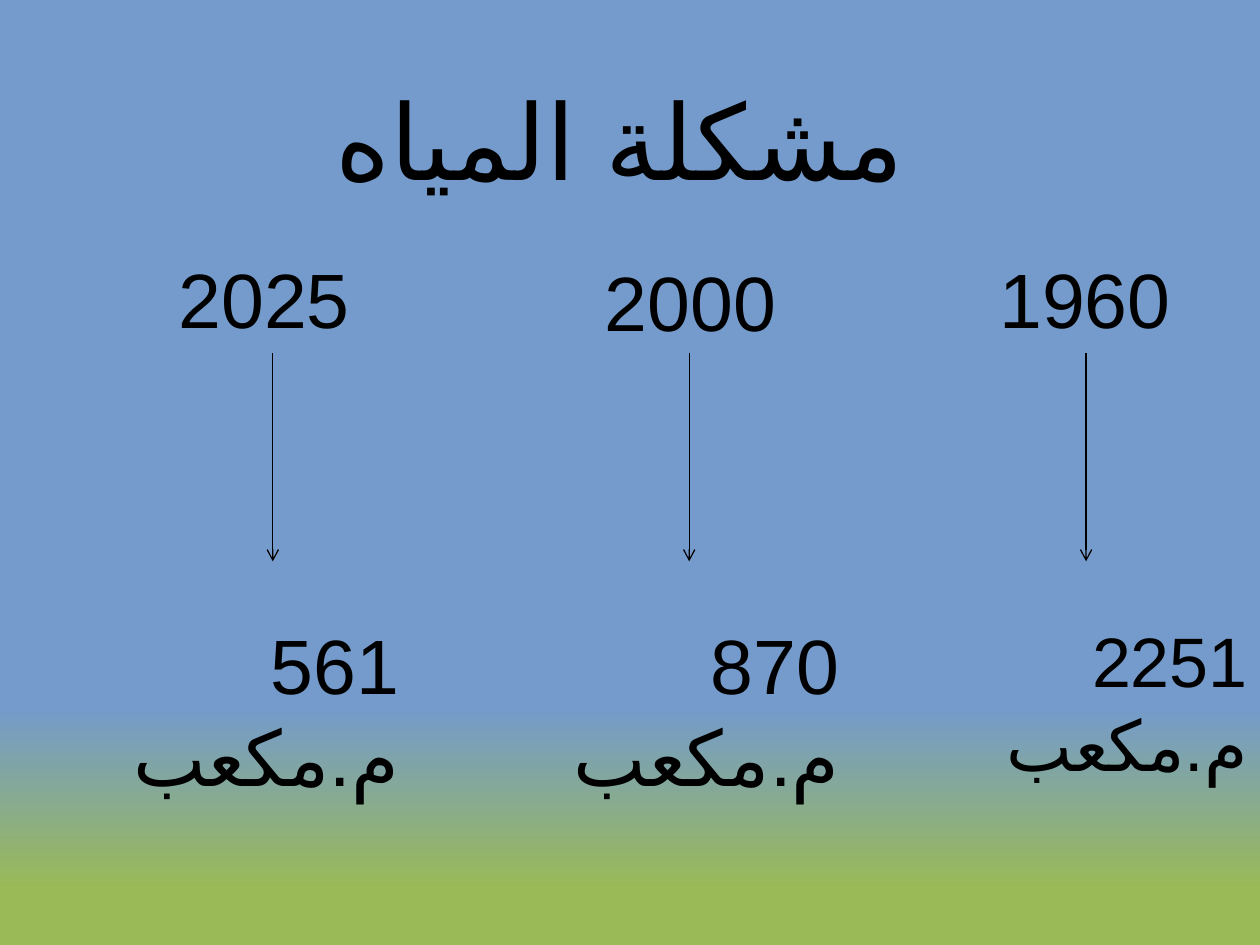
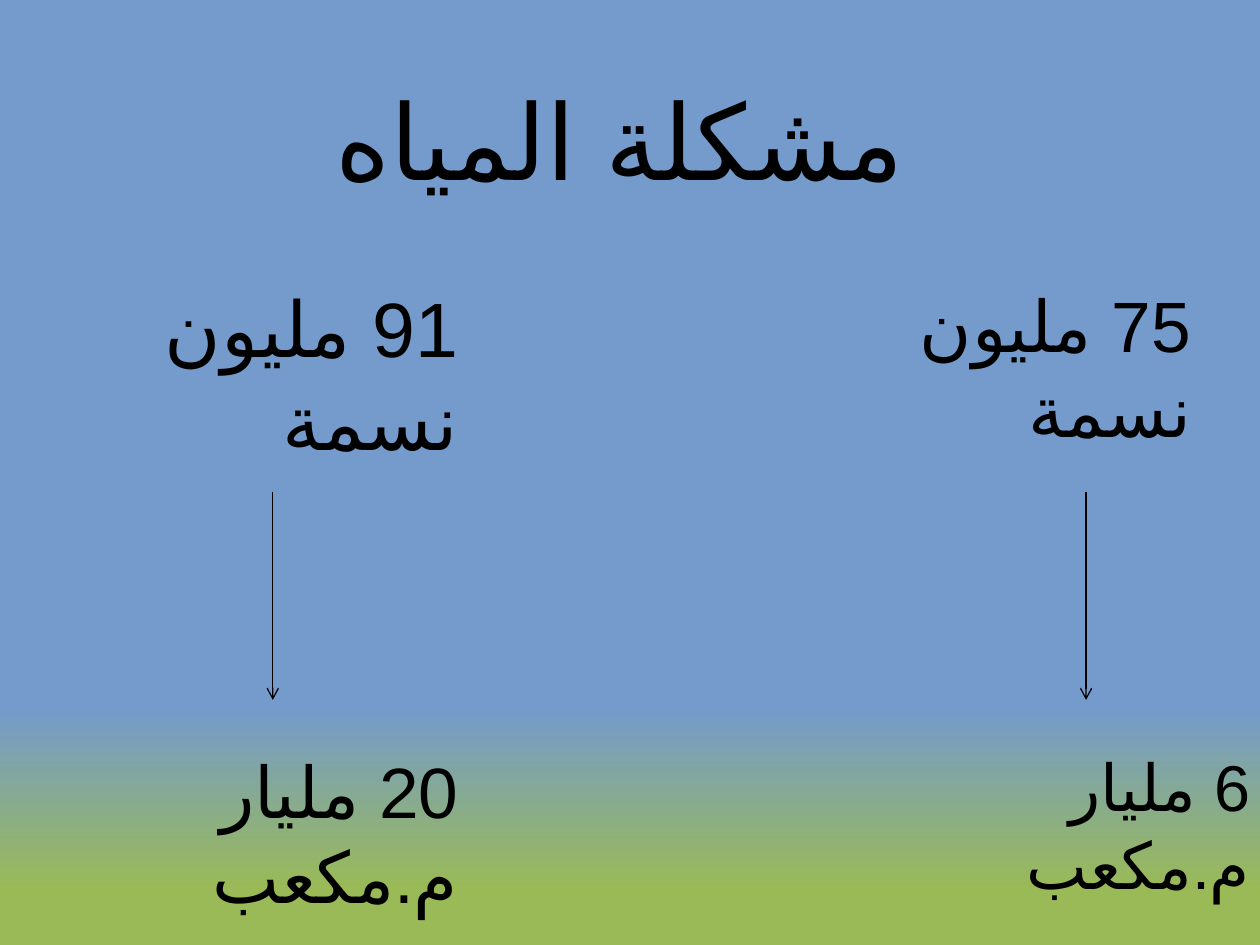
from dataclasses import dataclass

from lxml.etree import SubElement as Sub
from pptx import Presentation
from pptx.dml.color import RGBColor
from pptx.enum.lang import MSO_LANGUAGE_ID as Lang
from pptx.enum.shapes import MSO_CONNECTOR as Line
from pptx.enum.text import MSO_ANCHOR as Anchor, PP_ALIGN as Align
from pptx.oxml.ns import qn
from pptx.util import Inches, Pt

COLS, ROWS = 100, 75
WIDE, HIGH = Inches(10), Inches(7.5)
INK, SKY, GRASS = "000000", "749BCB", "9ABA57"
FONT, SCRIPT = "Calibri", "Arial"
TITLE = "مشكلة المياه"
TITLE_BOX = (6.7, 2.9, 85, 16.1)
ARROW_LEN = 16.5


@dataclass
class Flow:
    """A figure, an arrow and a result; shifts count from the box's left."""
    head: str
    foot: str
    box: tuple
    arrow: float
    shift: float
    width: float
    sizes: tuple = (44, 44)
    nudge: float = 0


WATER = [
    Flow("1960", "2251 م.مكعب", (67.1, 19.5, 26.8, 46), 19.1, 2.2, 30.7, (44, 40)),
    Flow("2000", "870 م.مكعب", (35.8, 19.5, 26.8, 46), 18.9, 2.4, 29.4, nudge=0.2),
    Flow("2025", "561 م.مكعب", (1.95, 19.5, 26.8, 46), 19.7, 0, 30.7),
]
PEOPLE = [
    Flow("75 مليون نسمة", "6 مليار م.مكعب", (65, 21.8, 30.5, 48), 21.2, 4.5, 30.7, (40.7, 37)),
    Flow("91 مليون نسمة", "20 مليار م.مكعب", (4.25, 21.8, 33.1, 48), 17.4, -2.3, 35.4, (44, 40.7)),
]


def rgb(code):
    return RGBColor.from_string(code)


def grid(*nums):
    """Turn columns and rows, in turn, into lengths."""
    units = (WIDE / COLS, HIGH / ROWS)
    return [round(num * units[i % 2]) for i, num in enumerate(nums)]


def write(slide, box, text, size=44, align=Align.RIGHT, anchor=Anchor.TOP, gap=20):
    """Add right-to-left text; gap is the space before in percent."""
    frame = slide.shapes.add_textbox(*grid(*box)).text_frame
    frame.word_wrap = True
    frame.vertical_anchor = anchor
    para = frame.paragraphs[0]
    para.alignment = align
    props = para._p.get_or_add_pPr()
    props.set("rtl", "1")
    if gap:
        space = Sub(props, qn("a:spcBef"))
        Sub(space, qn("a:spcPct")).set("val", str(gap * 1000))
    run = para.add_run()
    run.text = text
    font = run.font
    font.name = FONT
    font.size = Pt(size)
    font.color.rgb = rgb(INK)
    font.language_id = Lang.ARABIC_EGYPT
    Sub(font._element, qn("a:cs")).set("typeface", SCRIPT)


def arrow(slide, x, y):
    line = slide.shapes.add_connector(Line.STRAIGHT, *grid(x, y, x, y + ARROW_LEN))
    line.line.color.rgb = rgb(INK)
    line.line.width = Pt(0.75)
    Sub(line.line._get_or_add_ln(), qn("a:tailEnd")).set("type", "arrow")
    Sub(line._element.spPr, qn("a:effectLst"))


def draw(slide, flow, start, drop):
    """Place one flow: arrow begins start rows down, result drop rows down."""
    left, top, width, height = flow.box
    big, small = flow.sizes
    write(slide, (left, top + flow.nudge, width, 13.4), flow.head, size=big)
    arrow(slide, left + flow.arrow, top + start)
    foot = (left + flow.shift, top + drop, flow.width, height - drop)
    write(slide, foot, flow.foot, size=small)


def paint(slide):
    fill = slide.background.fill
    fill.gradient()
    fill.gradient_angle = 270
    for stop, code, spot in zip(fill.gradient_stops, (SKY, GRASS), (0.75, 0.94)):
        stop.color.rgb = rgb(code)
        stop.position = spot


def page(deck, flows, start, drop):
    slide = deck.slides.add_slide(deck.slide_layouts[6])
    paint(slide)
    write(slide, TITLE_BOX, TITLE, size=60, align=Align.CENTER,
          anchor=Anchor.MIDDLE, gap=0)
    for flow in flows:
        draw(slide, flow, start, drop)


def main():
    deck = Presentation()
    deck.slide_width, deck.slide_height = WIDE, HIGH
    page(deck, WATER, start=8.55, drop=29)
    page(deck, PEOPLE, start=17.25, drop=37)
    deck.save("out.pptx")


if __name__ == "__main__":
    main()
